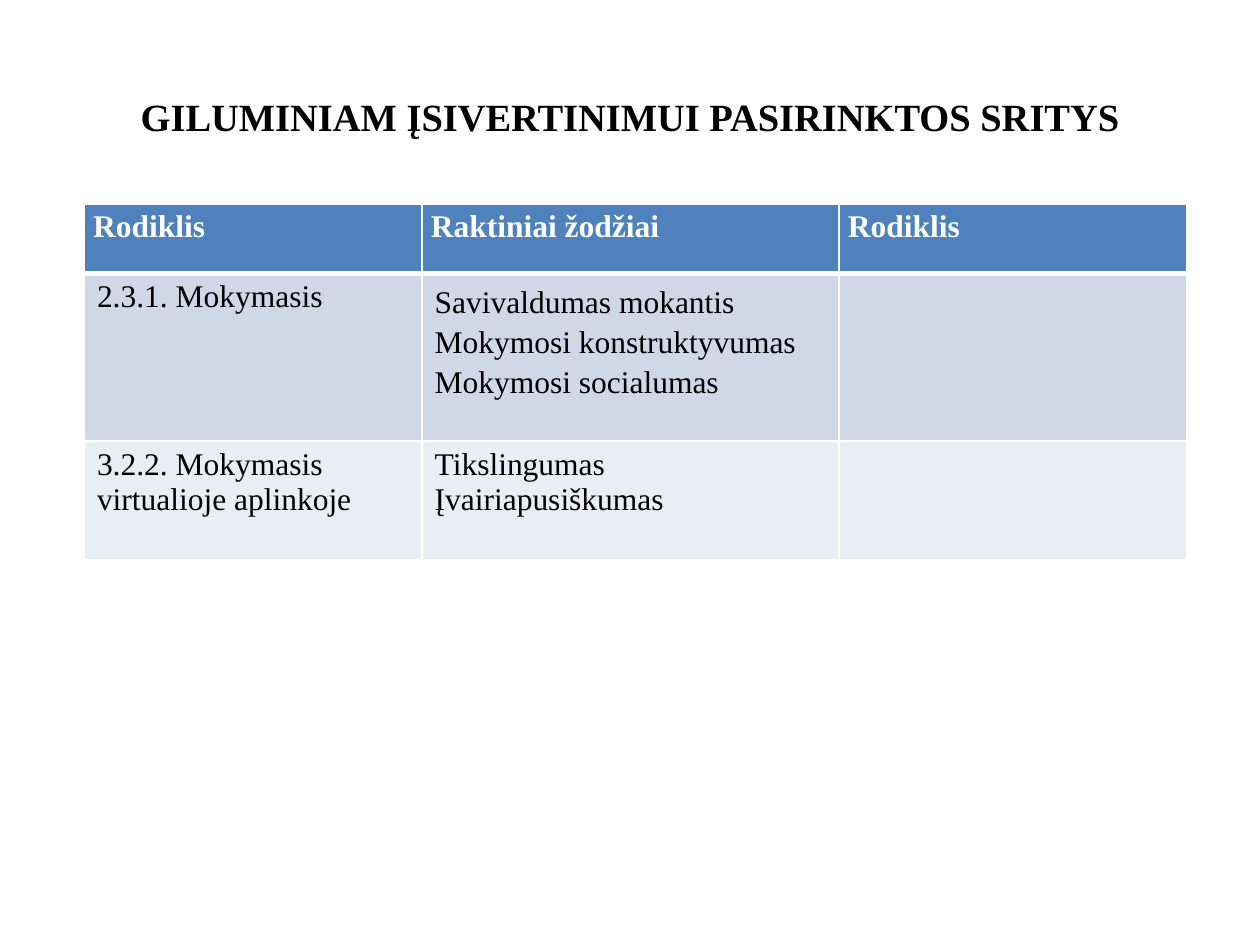
from lxml import etree
from pptx import Presentation
from pptx.dml.color import RGBColor
from pptx.enum import text
from pptx.oxml import ns
from pptx.util import Inches, Pt

FONT = "Times New Roman"
BLACK = RGBColor(0x00, 0x00, 0x00)
WHITE = RGBColor(0xFF, 0xFF, 0xFF)
HEADER_BLUE = RGBColor(0x4F, 0x81, 0xBD)
BAND_FILLS = [RGBColor(0xD0, 0xD8, 0xE8), RGBColor(0xE9, 0xED, 0xF4)]

COLUMN_WIDTHS = [2.68, 3.31, 2.76]
ROW_HEIGHTS = [0.55, 1.33, 0.94]
HEADINGS = ["Rodiklis", "Raktiniai žodžiai", "Rodiklis"]
# Each indicator: name, keywords, line spacing of the keywords
INDICATORS = [
    ("2.3.1. Mokymasis",
     "Savivaldumas mokantis\nMokymosi konstruktyvumas\nMokymosi socialumas", 1.15),
    ("3.2.2. Mokymasis virtualioje aplinkoje",
     "Tikslingumas\nĮvairiapusiškumas", 1.0),
]


def write(frame, wording, size, color, bold=False, spacing=1.0, align=None):
    frame.text = wording
    for paragraph in frame.paragraphs:
        paragraph.line_spacing = spacing
        paragraph.alignment = align
        font = paragraph.font
        font.name, font.size, font.bold = FONT, Pt(size), bold
        font.color.rgb = color


def set_borders(cell, bottom=1):
    properties = cell._tc.get_or_add_tcPr()
    widths = {"lnL": 1, "lnR": 1, "lnT": 1, "lnB": bottom}
    for position, (side, width) in enumerate(widths.items()):
        line = etree.Element(ns.qn(f"a:{side}"), w=str(Pt(width)))
        fill = etree.SubElement(line, ns.qn("a:solidFill"))
        etree.SubElement(fill, ns.qn("a:srgbClr"), val=str(WHITE))
        properties.insert(position, line)


def fill_cell(cell, color, bottom=1):
    cell.fill.solid()
    cell.fill.fore_color.rgb = color
    set_borders(cell, bottom)


def add_title(slide, wording):
    box = slide.shapes.add_textbox(Inches(0.5), Inches(0.3), Inches(9), Inches(1.25))
    frame = box.text_frame
    frame.word_wrap = True
    frame.vertical_anchor = text.MSO_ANCHOR.MIDDLE
    write(frame, wording, 22, BLACK, bold=True, align=text.PP_ALIGN.CENTER)


def add_indicator_table(slide):
    table = slide.shapes.add_table(
        len(ROW_HEIGHTS), len(COLUMN_WIDTHS), Inches(0.67), Inches(1.62),
        Inches(sum(COLUMN_WIDTHS)), Inches(sum(ROW_HEIGHTS))).table
    for column, width in zip(table.columns, COLUMN_WIDTHS):
        column.width = Inches(width)
    for row, height in zip(table.rows, ROW_HEIGHTS):
        row.height = Inches(height)

    # Header row
    for cell, heading in zip(table.rows[0].cells, HEADINGS):
        cell.margin_left = cell.margin_right = Inches(0.07)
        cell.margin_top = cell.margin_bottom = 0
        write(cell.text_frame, heading, 18, WHITE, bold=True, spacing=1.15)
        fill_cell(cell, HEADER_BLUE, bottom=3)

    # Indicator rows, last column left open
    for index, (name, keywords, spacing) in enumerate(INDICATORS):
        cells = list(table.rows[index + 1].cells)
        write(cells[0].text_frame, name, 18, BLACK)
        write(cells[1].text_frame, keywords, 18, BLACK, spacing=spacing)
        for cell in cells:
            fill_cell(cell, BAND_FILLS[index])


def main():
    deck = Presentation()
    deck.slide_width, deck.slide_height = Inches(10), Inches(7.5)
    slide = deck.slides.add_slide(deck.slide_layouts[6])
    add_title(slide, "GILUMINIAM ĮSIVERTINIMUI PASIRINKTOS SRITYS")
    add_indicator_table(slide)
    deck.save("out.pptx")


if __name__ == "__main__":
    main()
